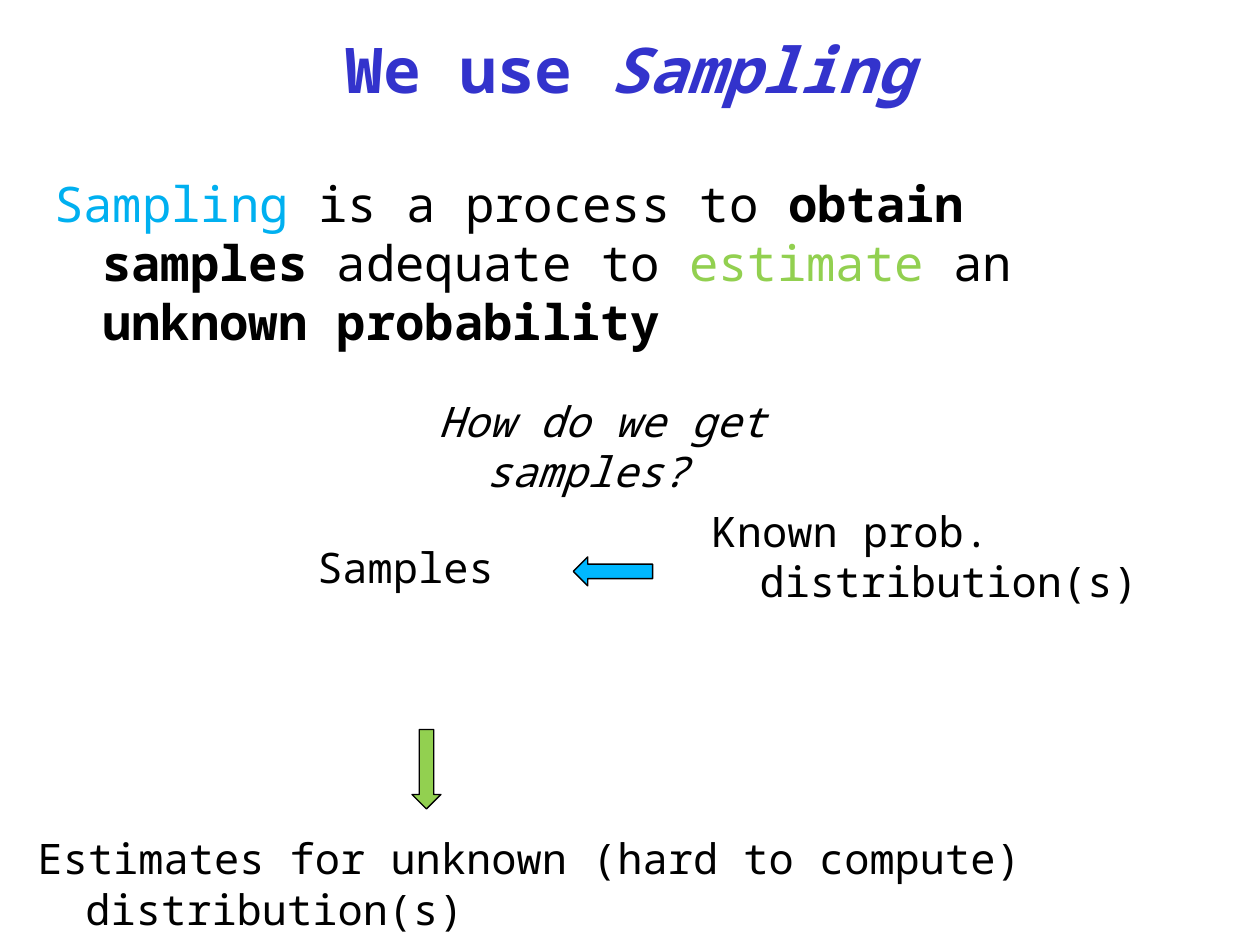
from dataclasses import dataclass

from lxml.etree import SubElement
from pptx import Presentation
from pptx.dml.color import RGBColor
from pptx.enum.shapes import MSO_SHAPE
from pptx.enum.text import MSO_ANCHOR, MSO_AUTO_SIZE, PP_ALIGN
from pptx.oxml.ns import qn
from pptx.util import Inches, Pt


@dataclass(frozen=True)
class Theme:
    font: str = "Noto Sans Mono"
    heading: str = "3333CC"
    ink: str = "000000"
    blue: str = "00B0F0"
    arrow_blue: str = "00B8FF"
    green: str = "92D050"
    title_size: int = 36
    body_size: int = 28
    label_size: int = 24
    outline: float = 0.75
    hanging: float = 0.38


def add_text(paragraph, text, *, font, size, color, bold=False, italic=False):
    """Append one formatted run to the paragraph."""
    run = paragraph.add_run()
    run.text = text
    run.font.name = font
    run.font.size = Pt(size)
    run.font.color.rgb = RGBColor.from_string(color)
    run.font.bold = bold
    run.font.italic = italic


class SlideBuilder:
    """Places elements on a grid of 100 columns by 75 rows."""

    columns, rows = 100, 75

    def __init__(self, presentation, theme):
        self.theme = theme
        self.column = presentation.slide_width / self.columns
        self.row = presentation.slide_height / self.rows
        self.slide = presentation.slides.add_slide(presentation.slide_layouts[1])

    def box(self, left, top, width, height):
        return (round(left * self.column), round(top * self.row),
                round(width * self.column), round(height * self.row))

    def fill_text(self, shape, runs, size, color):
        frame = shape.text_frame
        frame.word_wrap = True
        frame.auto_size = MSO_AUTO_SIZE.NONE
        paragraph = frame.paragraphs[0]
        for text, changes in runs:
            style = {"font": self.theme.font, "size": size, "color": color}
            add_text(paragraph, text, **(style | changes))
        return paragraph

    def hang(self, paragraph, size):
        """Indent every line but the first, without a bullet."""
        paragraph.space_before = Pt(0.2 * size)
        properties = paragraph._p.get_or_add_pPr()
        properties.set("marL", str(Inches(self.theme.hanging)))
        properties.set("indent", str(Inches(-self.theme.hanging)))
        SubElement(properties, qn("a:buNone"))

    def place(self, shape, area):
        shape.left, shape.top, shape.width, shape.height = self.box(*area)

    def title(self, area, runs):
        shape = self.slide.shapes.title
        self.place(shape, area)
        paragraph = self.fill_text(shape, runs, self.theme.title_size, self.theme.heading)
        paragraph.alignment = PP_ALIGN.CENTER
        shape.text_frame.vertical_anchor = MSO_ANCHOR.MIDDLE

    def body(self, area, runs):
        shape = self.slide.placeholders[1]
        self.place(shape, area)
        size = self.theme.body_size
        self.hang(self.fill_text(shape, runs, size, self.theme.ink), size)

    def label(self, area, text, **changes):
        shape = self.slide.shapes.add_textbox(*self.box(*area))
        size = self.theme.label_size
        self.hang(self.fill_text(shape, [(text, changes)], size, self.theme.ink), size)

    def arrow(self, kind, area, color):
        shape = self.slide.shapes.add_shape(kind, *self.box(*area))
        shape.shadow.inherit = False
        shape.fill.solid()
        shape.fill.fore_color.rgb = RGBColor.from_string(color)
        shape.line.color.rgb = RGBColor.from_string(self.theme.ink)
        shape.line.width = Pt(self.theme.outline)


def main():
    presentation = Presentation()
    presentation.slide_width, presentation.slide_height = Inches(10), Inches(7.5)
    theme = Theme()
    builder = SlideBuilder(presentation, theme)

    # Heading and definition
    builder.title((3.3, 1.7, 93.3, 7.5), [("We use ", {"bold": True}),
                                          ("Sampling", {"bold": True, "italic": True})])
    builder.body((3.3, 13.3, 92.5, 13.9), [
        ("Sampling", {"color": theme.blue}),
        (" is a process to ", {}),
        ("obtain samples ", {"bold": True}),
        ("adequate to ", {}),
        ("estimate", {"color": theme.green}),
        (" an ", {}),
        ("unknown probability", {"bold": True}),
    ])

    # Flow: known distribution to samples to estimates
    builder.arrow(MSO_SHAPE.LEFT_ARROW, (45.5, 44.2, 6.3, 2.3), theme.arrow_blue)
    builder.arrow(MSO_SHAPE.DOWN_ARROW, (32.7, 57.9, 2.3, 6.3), theme.green)
    builder.label((55.5, 39.6, 41.9, 13.9), "Known prob. distribution(s)")
    builder.label((2, 65.6, 91.1, 8.1),
                  "Estimates for unknown (hard to compute) distribution(s)")
    builder.label((24.2, 42.5, 23.3, 8.1), "Samples")

    # Question above the flow
    builder.label((33.8, 30.9, 28, 8.7), "How do we get samples?", italic=True)

    presentation.save("out.pptx")


if __name__ == "__main__":
    main()
